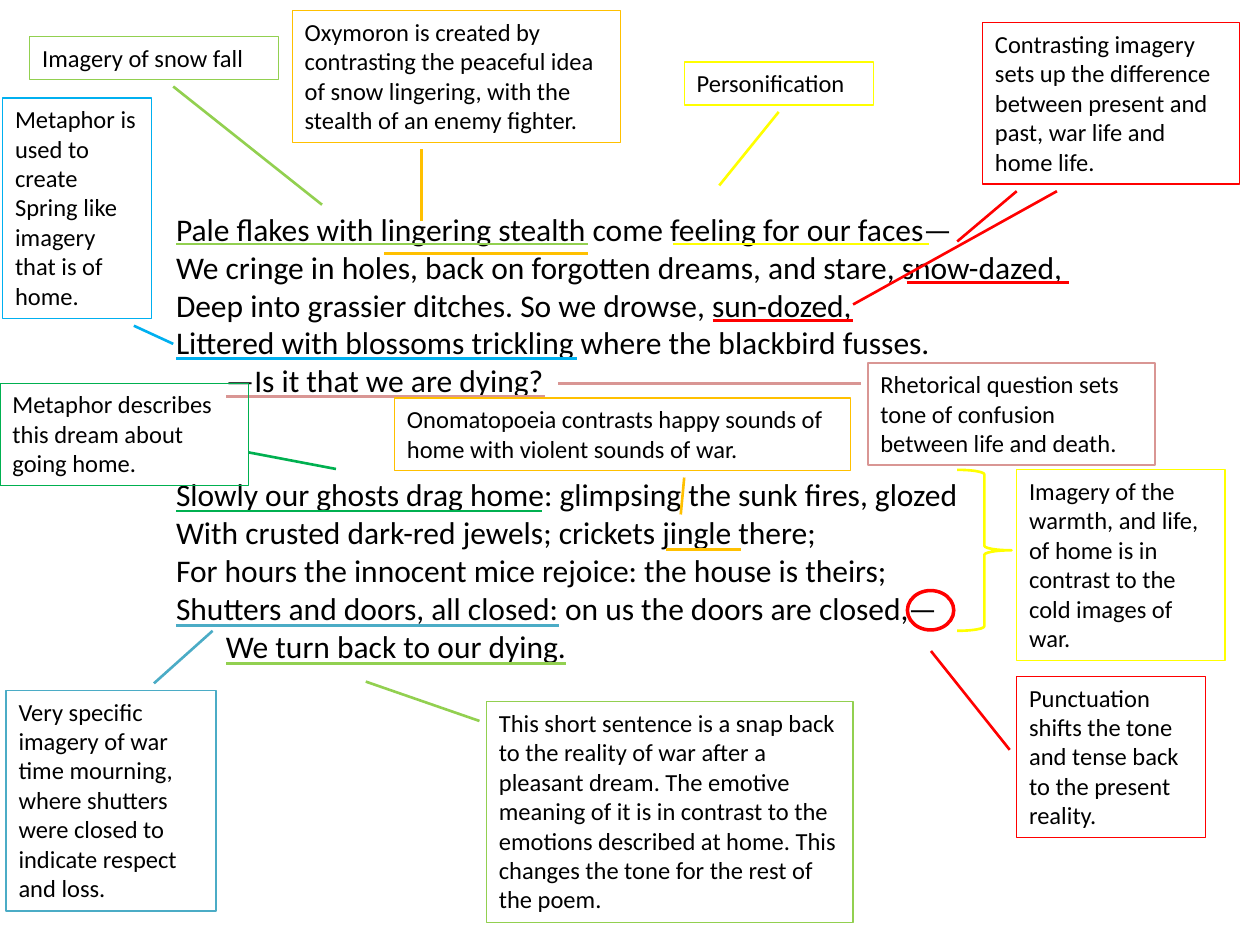
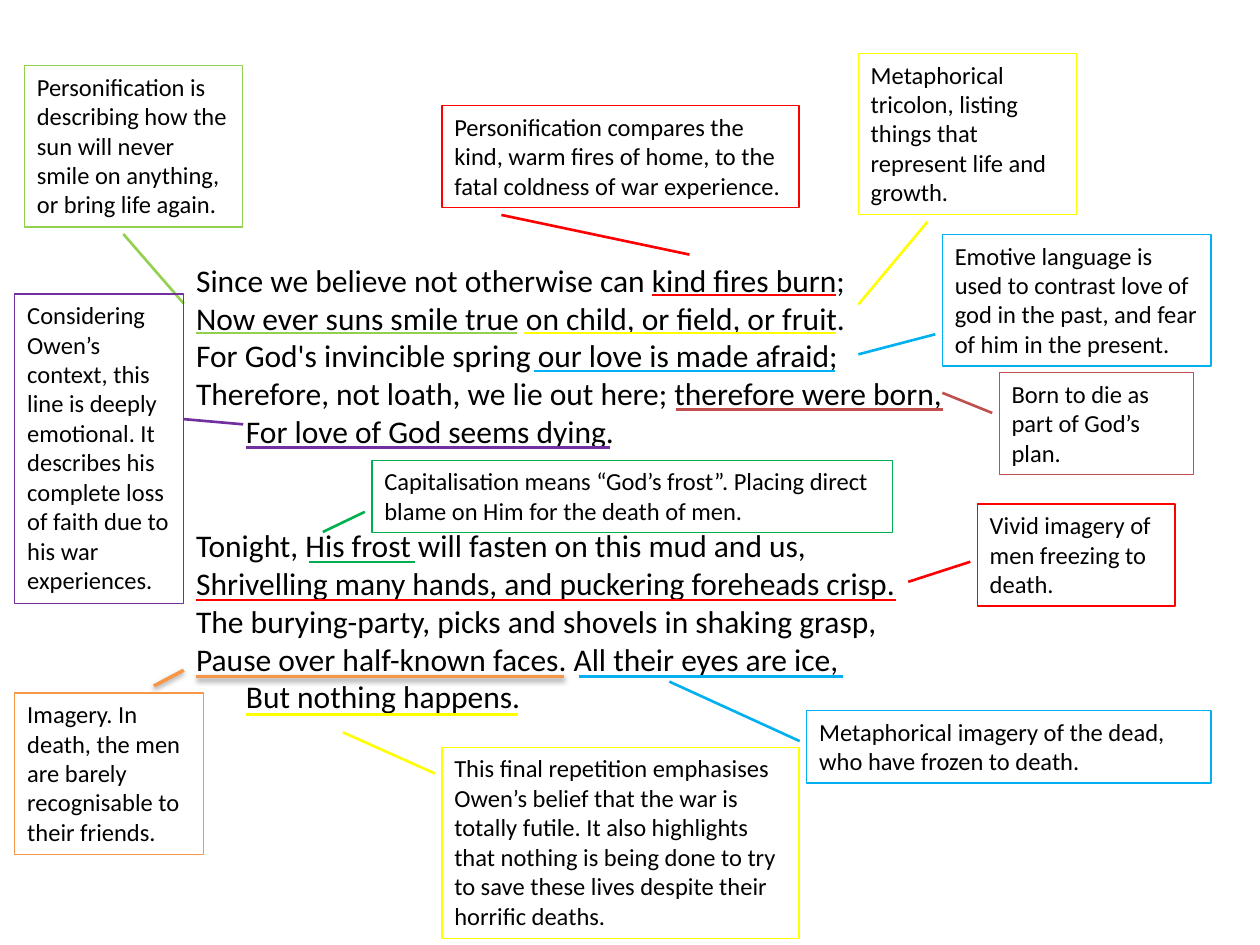
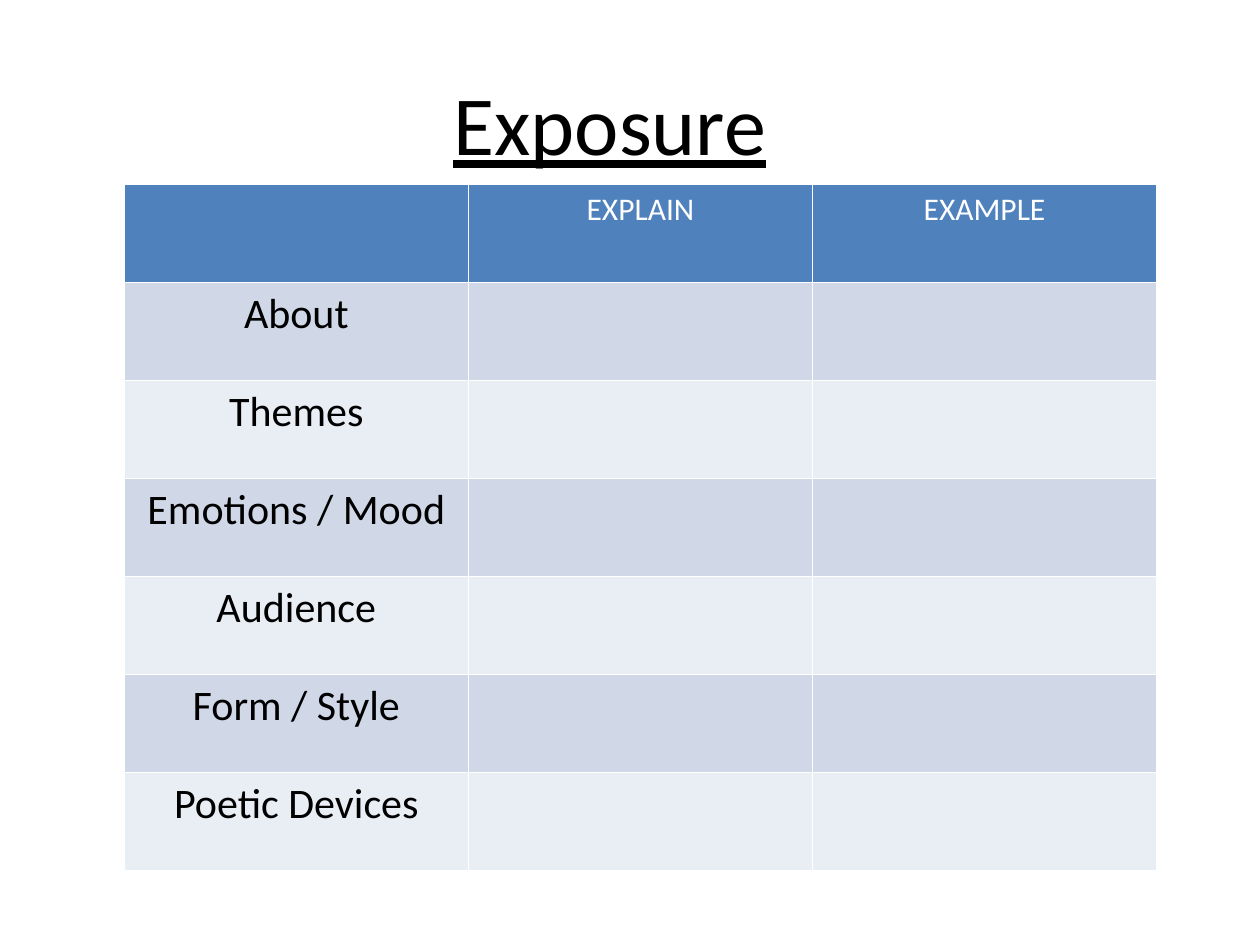
import pptx
import pptx.util
import pptx.dml.color
import pptx.enum.shapes
import pptx.enum.text
import lxml.etree

Pt = pptx.util.Pt
RGB = pptx.dml.color.RGBColor.from_string
MSO = pptx.enum.shapes.MSO_SHAPE
NS = "{http://schemas.openxmlformats.org/drawingml/2006/main}"

HUES = {
    "black": "000000", "white": "FFFFFF", "green": "92D050", "leaf": "00B050",
    "amber": "FFC000", "yellow": "FFFF00", "red": "FF0000", "blue": "00B0F0",
    "pink": "D99694", "teal": "4BACC6", "brick": "C0504D", "purple": "7030A0",
    "orange": "F79646", "head": "4F81BD", "odd": "D0D8E8", "even": "E9EDF4",
}
VERSE = {"name": "Calibri", "size": Pt(18), "bold": False}
NOTE = {"name": "Calibri", "size": Pt(14)}
TITLE = {"name": "Calibri", "size": Pt(48), "underline": True}
LABEL = {"name": "Calibri", "size": Pt(24), "bold": False}

# Letter widths in ems; other letters take 0.52
EMS = {"ijl '’I": 0.23, ".,:;": 0.26, "rtf-": 0.33, "sz": 0.39,
       "ckvxygSF": 0.45, "ae": 0.49, "HND": 0.62, "w": 0.72, "m": 0.8, "—W": 0.9}
PAD = 7.2       # side margin inside a text box
INDENT = 28.5   # last line of each stanza
PITCH = 21.8    # one line of verse
STANZA = 5      # lines in a stanza
BASE = 23       # top of a poem box to its first underline
GAP = 4         # note to the end of its pointer


def wide(words, size):
    """Estimate the width of some words in points."""
    return size * sum(
        next((em for group, em in EMS.items() if sign in group), 0.52)
        for sign in words)


def fill(frame, lines, look, hue="black"):
    """Write the lines as paragraphs in one look and return these."""
    frame.word_wrap = True
    frame.text = "\n".join(lines)
    for para in frame.paragraphs:
        for key, value in look.items():
            setattr(para.font, key, value)
        para.font.color.rgb = RGB(HUES[hue])
    return frame.paragraphs


# Each page: poem box, lines of verse, notes.
# Each note: hue, (left, top, width), text, underlined phrases,
# pointers (side of the note, place on that side, x and y of the far end).
PAGES = [
    ((93.5, 116.5, 566.5, 269.5), [
        "Pale flakes with lingering stealth come feeling for our faces—",
        "We cringe in holes, back on forgotten dreams, and stare, snow-dazed,",
        "Deep into grassier ditches. So we drowse, sun-dozed,",
        "Littered with blossoms trickling where the blackbird fusses.",
        "—Is it that we are dying?",
        "Slowly our ghosts drag home: glimpsing the sunk fires, glozed",
        "With crusted dark-red jewels; crickets jingle there;",
        "For hours the innocent mice rejoice: the house is theirs;",
        "Shutters and doors, all closed: on us the doors are closed,—",
        "We turn back to our dying.",
    ], [
        ("green", (17, 21, 142), "Imagery of snow fall",
         ["Pale flakes with lingering stealth"], [("bottom", 99, 184, 117)]),
        ("amber", (167, 6, 187.5),
         "Oxymoron is created by contrasting the peaceful idea of snow "
         "lingering, with the stealth of an enemy fighter.",
         ["lingering stealth"], [("bottom", 241, 241, 126)]),
        ("yellow", (391, 35.5, 108), "Personification",
         ["feeling for our faces"], [("bottom", 445, 411, 106)]),
        ("red", (561.5, 13, 147),
         "Contrasting imagery sets up the difference between present and "
         "past, war life and home life.",
         ["snow-dazed,", "sun-dozed,"],
         [("bottom", 581, 547, 138), ("bottom", 604, 487.5, 174)]),
        ("blue", (1.5, 56, 85),
         "Metaphor is used to create Spring like imagery that is of home.",
         ["Littered with blossoms trickling"], [("bottom", 76.5, 99, 196.5)]),
        ("pink", (496, 207.5, 164),
         "Rhetorical question sets tone of confusion between life and death.",
         ["—Is it that we are dying?"], [("left", 219, 319, 219)]),
        ("leaf", (0, 219, 142),
         "Metaphor describes this dream about going home.",
         ["Slowly our ghosts drag home"], [("right", 258.5, 192, 268)]),
        ("amber", (225.5, 227.5, 260.5),
         "Onomatopoeia contrasts happy sounds of home with violent sounds of war.",
         ["jingle "], [("bottom", 391, 389, 294)]),
        ("yellow", (581, 268.5, 119),
         "Imagery of the warmth, and life, of home is in contrast to the "
         "cold images of war.", [], []),
        ("red", (581, 386.5, 108),
         "Punctuation shifts the tone and tense back to the present reality.",
         [], [("left", 428.5, 532, 372)]),
        ("teal", (3.5, 394.5, 120),
         "Very specific imagery of war time mourning, where shutters were "
         "closed to indicate respect and loss.",
         ["Shutters and doors, all closed:"], [("top", 88, 121.5, 360.5)]),
        ("green", (278, 401, 209.5),
         "This short sentence is a snap back to the reality of war after a "
         "pleasant dream. The emotive meaning of it is in contrast to the "
         "emotions described at home. This changes the tone for the rest of "
         "the poem.",
         ["We turn back to our dying."], [("left", 412, 209, 389.5)]),
    ]),
    ((105, 145.5, 556, 269.5), [
        "Since we believe not otherwise can kind fires burn;",
        "Now ever suns smile true on child, or field, or fruit.",
        "For God's invincible spring our love is made afraid;",
        "Therefore, not loath, we lie out here; therefore were born,",
        "For love of God seems dying.",
        "Tonight, His frost will fasten on this mud and us,",
        "Shrivelling many hands, and puckering foreheads crisp.",
        "The burying-party, picks and shovels in shaking grasp,",
        "Pause over half-known faces. All their eyes are ice,",
        "But nothing happens.",
    ], [
        ("red", (252.5, 60.5, 204),
         "Personification compares the kind, warm fires of home, to the "
         "fatal coldness of war experience.",
         ["kind fires burn"], [("bottom", 286.5, 394, 145.5)]),
        ("green", (14, 37.5, 124.5),
         "Personification is describing how the sun will never smile on "
         "anything, or bring life again.",
         ["Now ever suns smile true"], [("bottom", 70.5, 105, 173.5)]),
        ("yellow", (490.5, 30.5, 124.5),
         "Metaphorical tricolon, listing things that represent life and growth.",
         ["on child, or field, or fruit"], [("bottom", 530, 490.5, 174)]),
        ("blue", (538.5, 134, 153.5),
         "Emotive language is used to contrast love of god in the past, and "
         "fear of him in the present.",
         ["our love is made afraid;"], [("left", 191, 490.5, 202.5)]),
        ("brick", (571, 213, 111), "Born to die as part of God’s plan.",
         ["therefore were born,"], [("left", 236, 538.5, 224.5)]),
        ("purple", (8.5, 168, 96.5),
         "Considering Owen’s context, this line is deeply emotional. It "
         "describes his complete loss of faith due to his war experiences.",
         ["For love of God seems dying."], [("right", 239.5, 139, 242.5)]),
        ("leaf", (212.5, 263, 297.5),
         "Capitalisation means “God’s frost”. Placing direct blame on Him "
         "for the death of men.",
         ["His frost"], [("left", 292.5, 184.5, 304)]),
        ("red", (558.5, 288, 113), "Vivid imagery of men freezing to death.",
         ["Shrivelling many hands, and puckering foreheads crisp."],
         [("left", 321, 519, 332.5)]),
        ("orange", (8.5, 396, 108),
         "Imagery. In death, the men are barely recognisable to their friends.",
         ["Pause over half-known faces"], [("top", 88, 105, 383)]),
        ("blue", (461, 406, 231),
         "Metaphorical imagery of the dead, who have frozen to death.",
         ["All their eyes are ice,"], [("left", 423.5, 382.5, 389.5)]),
        ("yellow", (252.5, 427, 204),
         "This final repetition emphasises Owen’s belief that the war is "
         "totally futile. It also highlights that nothing is being done to "
         "try to save these lives despite their horrific deaths.",
         ["But nothing happens."], [("left", 442, 196, 418.5)]),
    ]),
]

deck = pptx.Presentation()
deck.slide_width, deck.slide_height = Pt(720), Pt(540)
blank = deck.slide_layouts[6]

for area, verses, notes in PAGES:
    slide = deck.slides.add_slide(blank)
    poem = slide.shapes.add_textbox(*map(Pt, area))
    paras = fill(poem.text_frame, verses, VERSE)
    paras[STANZA].space_before = Pt(2 * PITCH)
    for last in paras[STANZA - 1::STANZA]:
        last._p.get_or_add_pPr().set("marL", str(Pt(INDENT)))

    seen = []
    for hue, (left, top, width), words, phrases, points in notes:
        rows, used = 1, 0
        for word in words.split():
            size = wide(word, 14)
            if used + size > width - 2 * PAD:
                rows, used = rows + 1, 0
            used += size + wide(" ", 14)
        height = 7.5 + 16.95 * rows

        lines = []
        for phrase in phrases:
            row = next(i for i, verse in enumerate(verses) if phrase in verse)
            start = area[0] + PAD + wide(verses[row].split(phrase)[0], 18)
            if row % STANZA == STANZA - 1:
                start += INDENT
            level = area[1] + BASE + PITCH * (row + 2 * (row >= STANZA))
            if any(phrase in other for other in seen):
                level += PITCH / 4
            seen.append(phrase)
            lines.append((start, level, start + wide(phrase, 18), level))
        for side, place, x, y in points:
            ends = {"top": (place, top - GAP), "left": (left - GAP, place),
                    "bottom": (place, top + height + GAP),
                    "right": (left + width, place)}
            lines.append((x, y, *ends[side]))

        glow = hue == "orange"
        for ends in lines:
            line = slide.shapes.add_connector(
                pptx.enum.shapes.MSO_CONNECTOR.STRAIGHT, *map(Pt, ends))
            line.line.color.rgb = RGB(HUES[hue])
            line.line.width = Pt(2 if glow else 1.5)
            effect = lxml.etree.SubElement(line._element.spPr, NS + "effectLst")
            if glow:
                shade = lxml.etree.SubElement(
                    effect, NS + "outerShdw", blurRad=str(Pt(3.1)),
                    dist=str(Pt(1.6)), dir="5400000", rotWithShape="0")
                tint = lxml.etree.SubElement(
                    shade, NS + "srgbClr", val=HUES["black"])
                lxml.etree.SubElement(tint, NS + "alpha", val="38000")

        note = slide.shapes.add_textbox(*map(Pt, (left, top, width, height)))
        fill(note.text_frame, [words], NOTE)
        note.text_frame.auto_size = pptx.enum.text.MSO_AUTO_SIZE.SHAPE_TO_FIT_TEXT
        note.line.color.rgb = RGB(HUES[hue])
        note.line.width = Pt(0.75)

# Marks around the closing lines of the first page
for kind, box, hue, width in [
    (MSO.RIGHT_BRACE, (547, 268.5, 31, 92), "yellow", 1.5),
    (MSO.OVAL, (518.5, 337.5, 26.5, 22.5), "red", 2),
]:
    mark = deck.slides[0].shapes.add_shape(kind, *map(Pt, box))
    mark.shadow.inherit = False
    mark.fill.background()
    mark.line.color.rgb = RGB(HUES[hue])
    mark.line.width = Pt(width)

# Summary table
slide = deck.slides.add_slide(blank)
title = slide.shapes.add_textbox(*map(Pt, (252, 37.5, 215.5, 65.5)))
fill(title.text_frame, ["Exposure"], TITLE)
HEADS = ["", "EXPLAIN", "EXAMPLE"]
TOPICS = ["About", "Themes", "Emotions / Mood", "Audience", "Form / Style",
          "Poetic Devices"]
cells = [HEADS] + [[topic, "", ""] for topic in TOPICS]
grid = slide.shapes.add_table(
    len(cells), len(HEADS), *map(Pt, (71, 105.5, 590, 392))).table
for r, row in enumerate(cells):
    for c, words in enumerate(row):
        cell = grid.cell(r, c)
        cell.fill.solid()
        shade = "head" if r == 0 else "odd" if r % 2 else "even"
        cell.fill.fore_color.rgb = RGB(HUES[shade])
        paras = fill(cell.text_frame, [words], LABEL if r else VERSE,
                     "black" if r else "white")
        paras[0].alignment = pptx.enum.text.PP_ALIGN.CENTER

deck.save("out.pptx")
